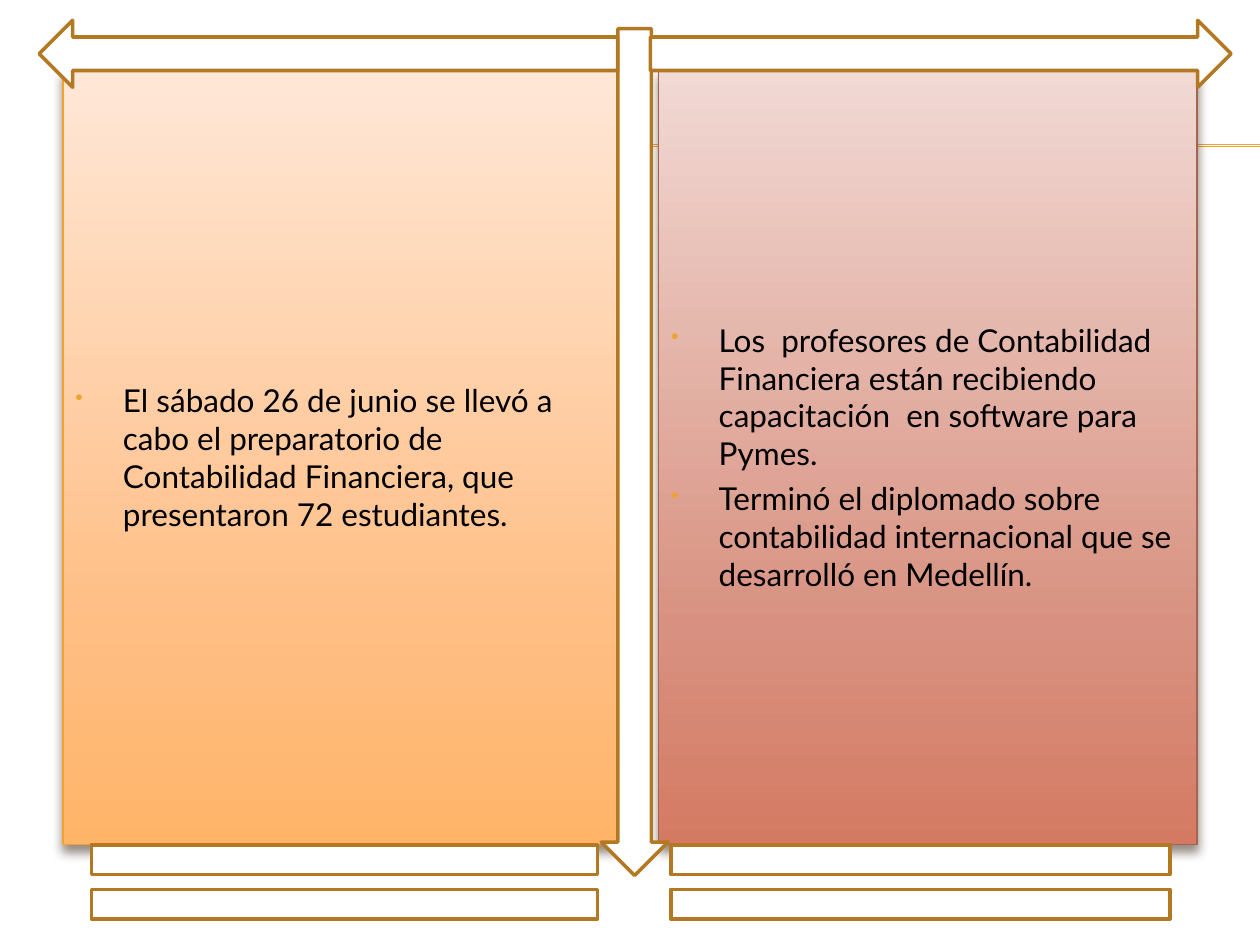
from copy import deepcopy

from lxml.etree import SubElement
from pptx import Presentation
from pptx.dml.color import RGBColor
from pptx.enum.shapes import MSO_CONNECTOR, MSO_SHAPE
from pptx.enum.text import MSO_ANCHOR, PP_ALIGN
from pptx.oxml.ns import qn
from pptx.util import Cm, Pt

WHITE = RGBColor(0xFF, 0xFF, 0xFF)
BLACK = RGBColor(0x00, 0x00, 0x00)
AMBER = RGBColor(0xF0, 0xA2, 0x2E)
BRONZE = RGBColor(0xB2, 0x78, 0x22)
BRICK = RGBColor(0xA5, 0x64, 0x4E)
SHADOW = RGBColor(0x4E, 0x3B, 0x30)
ORANGE_SHADES = (
    RGBColor(0xFF, 0xE7, 0xD7), RGBColor(0xFF, 0xBE, 0x84), RGBColor(0xFF, 0xB4, 0x68))
RED_SHADES = (
    RGBColor(0xF1, 0xD9, 0xD4), RGBColor(0xD8, 0x91, 0x80), RGBColor(0xD4, 0x7A, 0x62))
SHADE_POSITIONS = (0, 0.72, 1)


class SlideBuilder:
    """Holds the text style and the current slide, and draws its elements."""

    def __init__(self, slide, font_name="Lato", font_size=Pt(18)):
        self.slide = slide
        self.font_name = font_name
        self.font_size = font_size

    def rule(self, left, right, top):
        line = self.slide.shapes.add_connector(
            MSO_CONNECTOR.STRAIGHT, Cm(left), Cm(top), Cm(right), Cm(top))
        line.line.color.rgb = AMBER
        line.line.width = Pt(0.75)
        SubElement(line._element.spPr, qn("a:effectLst"))

    def outline(self, kind, left, top, width, height, color=BRONZE, weight=2):
        shape = self.slide.shapes.add_shape(kind, Cm(left), Cm(top), Cm(width), Cm(height))
        shape.shadow.inherit = False
        shape.fill.solid()
        shape.fill.fore_color.rgb = WHITE
        shape.line.color.rgb = color
        shape.line.width = Pt(weight)
        return shape

    def panel(self, left, width, shades, border, texts):
        shape = self.outline(MSO_SHAPE.RECTANGLE, left, 1.4, width, 15.62, border, 0.79)
        self.shade(shape, shades)
        self.cast_shadow(shape)
        frame = shape.text_frame
        frame.word_wrap = True
        frame.vertical_anchor = MSO_ANCHOR.MIDDLE
        for index, text in enumerate(texts):
            paragraph = frame.add_paragraph() if index else frame.paragraphs[0]
            self.bullet(paragraph, text, Pt(4.3 if index else 0))

    def shade(self, shape, shades):
        shape.fill.gradient()
        shape.fill.gradient_angle = 270
        stop_list = shape._element.spPr.find(qn("a:gradFill")).find(qn("a:gsLst"))
        stop_list.append(deepcopy(stop_list[0]))
        for stop, position, color in zip(shape.fill.gradient_stops, SHADE_POSITIONS, shades):
            stop.position = position
            stop.color.rgb = color

    def cast_shadow(self, shape):
        effects = shape._element.spPr.find(qn("a:effectLst"))
        shadow = SubElement(
            effects, qn("a:outerShdw"), blurRad=str(Pt(6)), dist=str(Pt(4)),
            dir="5400000", rotWithShape="0")
        color = SubElement(shadow, qn("a:srgbClr"), val=str(SHADOW))
        SubElement(color, qn("a:alpha"), val="60000")

    def bullet(self, paragraph, text, space_before):
        paragraph.text = text
        paragraph.alignment = PP_ALIGN.LEFT
        paragraph.space_before = space_before
        properties = paragraph._p.get_or_add_pPr()
        properties.set("marL", str(Cm(0.96)))
        properties.set("indent", str(-Cm(0.96)))
        color = SubElement(properties, qn("a:buClr"))
        SubElement(color, qn("a:srgbClr"), val=str(AMBER))
        SubElement(properties, qn("a:buSzPct"), val="70000")
        SubElement(properties, qn("a:buChar"), char="•")
        paragraph.font.name = self.font_name
        paragraph.font.size = self.font_size
        paragraph.font.color.rgb = BLACK


def main():
    presentation = Presentation()
    presentation.slide_width = Cm(25.4)
    presentation.slide_height = Cm(19.05)
    builder = SlideBuilder(presentation.slides.add_slide(presentation.slide_layouts[6]))

    for top in (2.92, 2.95):
        builder.rule(1.42, 25.4, top)

    builder.panel(1.27, 11.23, ORANGE_SHADES, AMBER, [
        "El sábado 26 de junio se llevó a cabo el preparatorio de Contabilidad "
        "Financiera, que presentaron 72 estudiantes.",
    ])
    builder.panel(13.28, 10.85, RED_SHADES, BRICK, [
        "Los  profesores de Contabilidad Financiera están recibiendo "
        "capacitación  en software para Pymes.",
        "Terminó el diplomado sobre contabilidad internacional que se "
        "desarrolló en Medellín.",
    ])

    builder.outline(MSO_SHAPE.DOWN_ARROW, 12.12, 0.58, 1.35, 17.07)
    builder.outline(MSO_SHAPE.RIGHT_ARROW, 13.11, 0.41, 11.71, 1.35)
    builder.outline(MSO_SHAPE.LEFT_ARROW, 0.79, 0.41, 11.66, 1.35)
    for left, width in ((0, 13.89), (11.71, 13.69)):
        builder.outline(MSO_SHAPE.MATH_EQUAL, left, 16.51, width, 2.54)

    presentation.save("out.pptx")


if __name__ == "__main__":
    main()
